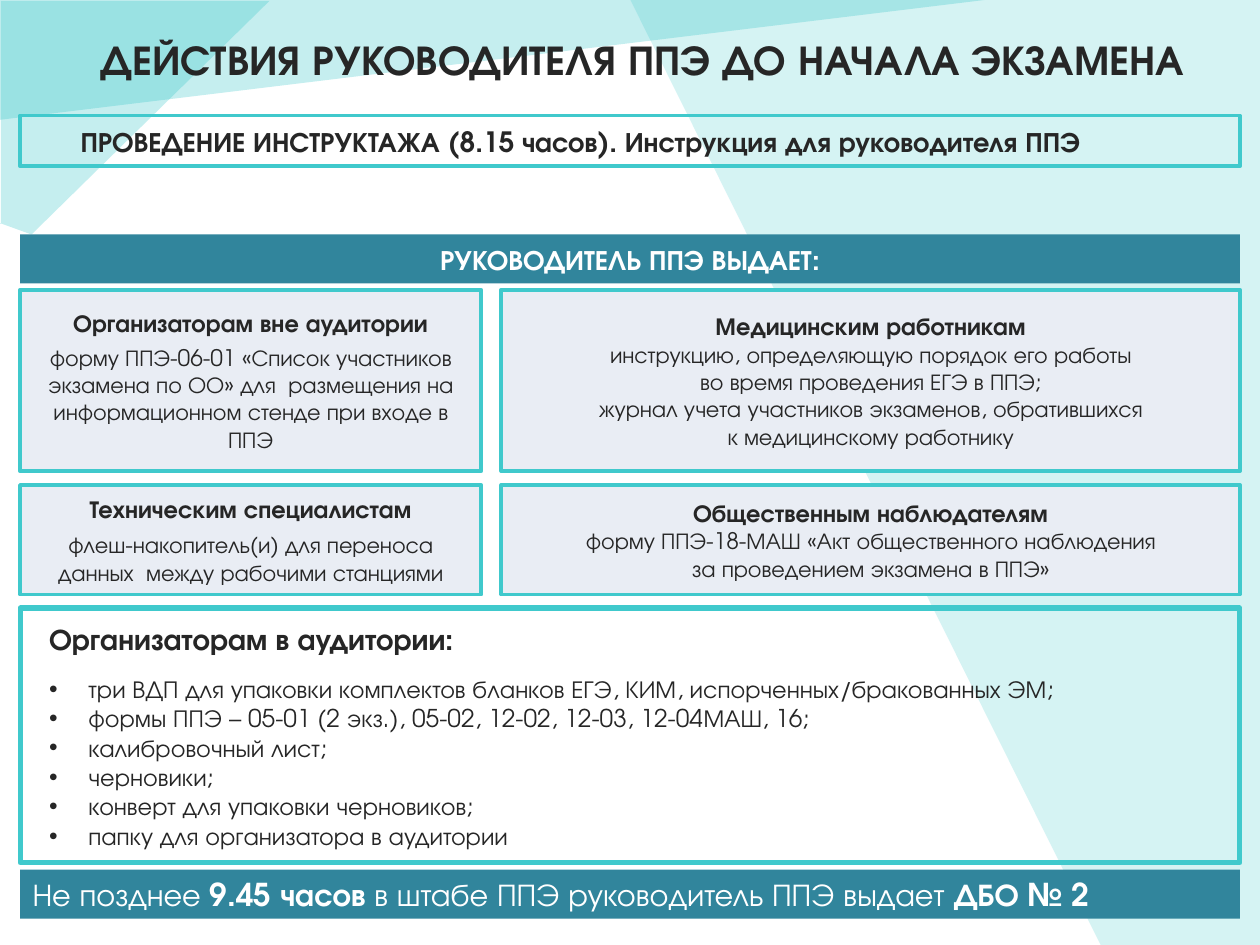
from lxml import etree
from pptx import Presentation
from pptx.dml.color import RGBColor
from pptx.enum.shapes import MSO_SHAPE
from pptx.enum.text import MSO_ANCHOR, MSO_AUTO_SIZE, PP_ALIGN
from pptx.oxml.ns import qn
from pptx.util import Pt

RECTANGLE = MSO_SHAPE.RECTANGLE
MIDDLE = MSO_ANCHOR.MIDDLE
NO_AUTOFIT = MSO_AUTO_SIZE.NONE
LEFT, CENTER, JUSTIFY = PP_ALIGN.LEFT, PP_ALIGN.CENTER, PP_ALIGN.JUSTIFY

FONT = "TeX Gyre Adventor"
DARK, WHITE = "262626", "FFFFFF"
TEAL, AQUA, PALE, BACKDROP = "31859C", "40C9CC", "E9EDF4", "20C0C4"
TITLE_ONLY = 5


def rgb(value):
    return RGBColor.from_string(value)


def add_box(left, top, width, height, lines, fill=None, border=0,
            color=DARK, align=CENTER, inset=7.2):
    """Rectangle whose lines are (text, size, bold, space before)."""
    box = slide.shapes.add_shape(RECTANGLE, Pt(left), Pt(top), Pt(width), Pt(height))
    box.shadow.inherit = False
    if fill:
        box.fill.solid()
        box.fill.fore_color.rgb = rgb(fill)
    else:
        box.fill.background()
    if border:
        box.line.color.rgb = rgb(AQUA)
        box.line.width = Pt(border)
    else:
        box.line.fill.background()
    frame = box.text_frame
    frame.word_wrap = True
    frame.vertical_anchor = MIDDLE
    frame.margin_left = frame.margin_right = Pt(inset)
    frame.text = "\n".join(line[0] for line in lines)
    for paragraph, (text, size, bold, before) in zip(frame.paragraphs, lines):
        paragraph.alignment = align
        paragraph.space_before = Pt(before)
        for run in paragraph.runs:
            run.font.name, run.font.size, run.font.bold = FONT, Pt(size), bold
            run.font.color.rgb = rgb(color)
    return box


presentation = Presentation()
presentation.slide_width, presentation.slide_height = Pt(720), Pt(540)
slide = presentation.slides.add_slide(presentation.slide_layouts[TITLE_ONLY])

# Translucent background facets: opacity in percent, corner points
facets = [
    (19, [(723, 540), (629, 540), (360, -0.5), (723, -0.5)]),
    (26, [(563, 0), (0, 68.5), (0, -0.5)]),
    (26, [(0, 127.5), (18, 134), (154, 0.5), (0.5, 0.5), (0.5, 128)]),
]
for opacity, corners in facets:
    points = [(Pt(x), Pt(y)) for x, y in corners]
    builder = slide.shapes.build_freeform(*points[0], scale=1.0)
    builder.add_line_segments(points[1:], close=True)
    facet = builder.convert_to_shape()
    facet.shadow.inherit = False
    facet.line.fill.background()
    facet.fill.solid()
    facet.fill.fore_color.rgb = rgb(BACKDROP)
    facet_color = facet.element.spPr.find(qn("a:solidFill"))[0]
    etree.SubElement(facet_color, qn("a:alpha"), val=str(opacity * 1000))

# Title, brought in front of the facets
title = slide.shapes.title
title.element.getparent().append(title.element)
title.left, title.top, title.width, title.height = Pt(14.4), Pt(-8), Pt(705.6), Pt(83.5)
title.text_frame.text = "ДЕЙСТВИЯ РУКОВОДИТЕЛЯ ППЭ ДО НАЧАЛА ЭКЗАМЕНА"
title.text_frame.auto_size = NO_AUTOFIT
title.text_frame.vertical_anchor = MIDDLE
heading = title.text_frame.paragraphs[0]
heading.alignment = CENTER
heading.font.name, heading.font.size, heading.font.bold = FONT, Pt(24), True
heading.font.color.rgb = rgb(DARK)

# Shared columns
MARGIN, FULL_WIDTH = 11.5, 697
LEFT_COLUMN, RIGHT_COLUMN = (MARGIN, 263.5), (286.5, 422)

# Briefing line and section header
briefing = "ПРОВЕДЕНИЕ ИНСТРУКТАЖА (8.15 часов). Инструкция для руководителя ППЭ"
add_box(MARGIN, 66, FULL_WIDTH, 29, [(briefing, 16, True, 0)],
        border=2.25, align=LEFT, inset=34.5)
add_box(MARGIN, 134, FULL_WIDTH, 28, [("РУКОВОДИТЕЛЬ ППЭ ВЫДАЕТ:", 16, True, 3.9)],
        fill=TEAL, color=WHITE)

# Recipient cards: column, top, height, lines
cards = [
    (LEFT_COLUMN, 165.6, 103.7, [
        ("Организаторам вне аудитории", 14, True, 4.4),
        ("форму ППЭ-06-01 «Список участников экзамена по ОО» для  размещения на "
         "информационном стенде при входе в ППЭ", 13, False, 3.4)]),
    (RIGHT_COLUMN, 165.6, 103.7, [
        ("Медицинским работникам", 14, True, 0),
        ("инструкцию, определяющую порядок его работы\v"
         "во время проведения ЕГЭ в ППЭ;", 13, False, 0),
        ("журнал учета участников экзаменов, обратившихся\v"
         "к медицинскому работнику", 13, False, 0)]),
    (LEFT_COLUMN, 277.2, 62.6, [
        ("Техническим специалистам", 14, True, 4.4),
        ("флеш-накопитель(и) для переноса данных  между рабочими станциями",
         13, False, 4.4)]),
    (RIGHT_COLUMN, 277.2, 62.6, [
        ("Общественным наблюдателям", 14, True, 0),
        ("форму ППЭ-18-МАШ «Акт общественного наблюдения\v"
         "за проведением экзамена в ППЭ»", 13, False, 0)]),
]
for (left, width), top, height, lines in cards:
    add_box(left, top, width, height, lines, fill=PALE, border=2.25)

# Classroom organisers with a bulleted list
items = [
    "три ВДП для упаковки комплектов бланков ЕГЭ, КИМ, испорченных/бракованных ЭМ;",
    "формы ППЭ – 05-01 (2 экз.), 05-02, 12-02, 12-03, 12-04МАШ, 16;",
    "калибровочный лист;",
    "черновики;",
    "конверт для упаковки черновиков;",
    "папку для организатора в аудитории",
]
organisers = add_box(
    MARGIN, 347.5, FULL_WIDTH, 145.5,
    [("Организаторам в аудитории:", 17, True, 0)] + [(item, 14, False, 0) for item in items],
    border=3, align=JUSTIFY, inset=16.5)
organiser_heading, *bullets = organisers.text_frame.paragraphs
organiser_heading.space_after = Pt(10)
for bullet in bullets:
    properties = bullet._p.get_or_add_pPr()
    properties.set("marL", str(Pt(22.5)))
    properties.set("indent", str(Pt(-22.5)))
    etree.SubElement(properties, qn("a:buFont"), typeface="Arial")
    etree.SubElement(properties, qn("a:buChar"), char="•")

# Deadline bar with bold key facts
deadline = add_box(MARGIN, 497, FULL_WIDTH, 28, [("Не позднее ", 18, False, 3.9)],
                   fill=TEAL, color=WHITE, align=LEFT)
for text, bold in [("9.45 часов", True),
                   (" в штабе ППЭ руководитель ППЭ выдает ", False),
                   ("ДБО № 2", True)]:
    run = deadline.text_frame.paragraphs[0].add_run()
    run.text = text
    run.font.name, run.font.size, run.font.bold = FONT, Pt(18), bold
    run.font.color.rgb = rgb(WHITE)

presentation.save("out.pptx")
